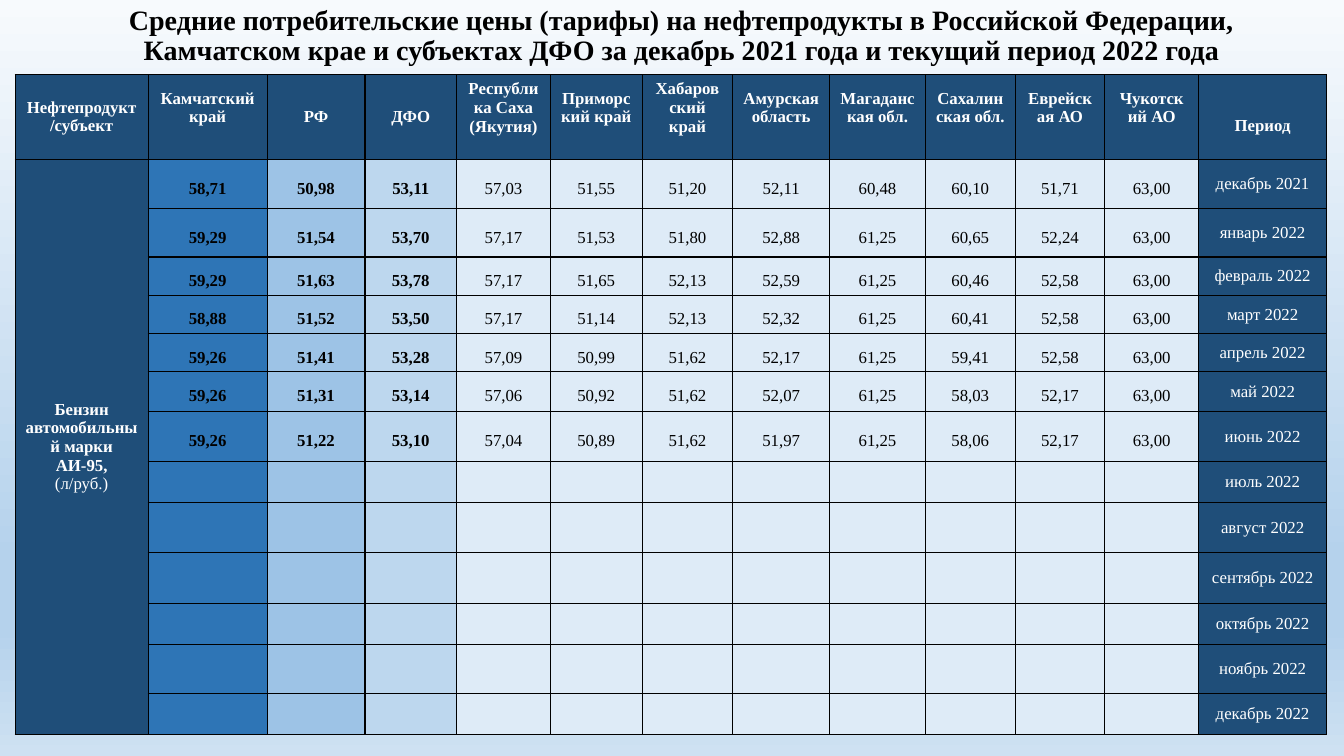
from dataclasses import dataclass
from itertools import product

from lxml.etree import SubElement
from pptx import Presentation
from pptx.dml.color import RGBColor
from pptx.enum.text import MSO_ANCHOR, MSO_AUTO_SIZE, PP_ALIGN
from pptx.oxml.ns import qn
from pptx.slide import Slide
from pptx.table import Table, _Cell
from pptx.text.text import _Paragraph
from pptx.util import Inches, Pt

COLORS = {
    "black": "000000", "white": "FFFFFF", "navy": "1F4E79",
    "region": "2E75B6", "country": "9DC3E6", "district": "BDD7EE", "pale": "DEEBF7",
}
BACKGROUND = {0: "F7FAFD", 74: "B5D2EC", 83: "B5D2EC", 100: "CEE1F2"}
FONT = "Times New Roman"
TITLE = ("Средние потребительские цены (тарифы) на нефтепродукты в Российской Федерации, "
         "Камчатском крае и субъектах ДФО за декабрь 2021 года и текущий период 2022 года")
HALF_LINE = 0.18  # extra cell margin that moves a heading by half a line


@dataclass
class Column:
    heading: str
    width: float
    fill: str = "pale"
    bold: bool = False
    margins: tuple[float, float] = (0.05, 0.05 + HALF_LINE)


@dataclass
class Period:
    name: str
    height: float
    prices: str = ""


COLUMNS = [
    Column("Нефтепродукт/субъект", 1.32, "navy", True, (0.05, 0.05)),
    Column("Камчатский край", 1.18, "region", True),
    Column("РФ", 0.97, "country", True, (0.05, 0.05)),
    Column("ДФО", 0.91, "district", True, (0.05, 0.05)),
    Column("Республика Саха (Якутия)", 0.93),
    Column("Приморский край", 0.91),
    Column("Хабаровский край", 0.9),
    Column("Амурская область", 0.96),
    Column("Магаданская обл.", 0.95),
    Column("Сахалинская обл.", 0.89),
    Column("Еврейская АО", 0.89),
    Column("Чукотский АО", 0.93),
    Column("Период", 1.27, "navy", False, (0.05 + HALF_LINE, 0.05)),
]
HEADER_HEIGHT = 0.84
PERIODS = [
    Period("декабрь 2021", 0.49, "58,71 50,98 53,11 57,03 51,55 51,20 52,11 60,48 60,10 51,71 63,00"),
    Period("январь 2022", 0.48, "59,29 51,54 53,70 57,17 51,53 51,80 52,88 61,25 60,65 52,24 63,00"),
    Period("февраль 2022", 0.38, "59,29 51,63 53,78 57,17 51,65 52,13 52,59 61,25 60,46 52,58 63,00"),
    Period("март 2022", 0.38, "58,88 51,52 53,50 57,17 51,14 52,13 52,32 61,25 60,41 52,58 63,00"),
    Period("апрель 2022", 0.38, "59,26 51,41 53,28 57,09 50,99 51,62 52,17 61,25 59,41 52,58 63,00"),
    Period("май 2022", 0.39, "59,26 51,31 53,14 57,06 50,92 51,62 52,07 61,25 58,03 52,17 63,00"),
    Period("июнь 2022", 0.5, "59,26 51,22 53,10 57,04 50,89 51,62 51,97 61,25 58,06 52,17 63,00"),
    Period("июль 2022", 0.38),
    Period("август 2022", 0.5),
    Period("сентябрь 2022", 0.5),
    Period("октябрь 2022", 0.38),
    Period("ноябрь 2022", 0.49),
    Period("декабрь 2022", 0.4),
]
PRODUCT = {"Бензин автомобильный марки": True, "АИ-95,": True, "(л/руб.)": False}


def apply(target: object, values: dict) -> None:
    for name, value in values.items():
        setattr(target, name, value)


def write(para: _Paragraph, text: str, color: str, bold: bool,
          size: int = 12, spacing: float = 1.0) -> None:
    apply(para, {"alignment": PP_ALIGN.CENTER, "line_spacing": spacing})
    span = para.add_run()
    span.text = text
    apply(span.font, {"name": FONT, "size": Pt(size), "bold": bold})
    span.font.color.rgb = RGBColor.from_string(COLORS[color])


def paint_cell(cell: _Cell, fill: str) -> None:
    properties = cell._tc.get_or_add_tcPr()
    for side in ("a:lnL", "a:lnR", "a:lnT", "a:lnB"):
        line = SubElement(properties, qn(side), w=str(Pt(1)))
        SubElement(SubElement(line, qn("a:solidFill")), qn("a:srgbClr"), val=COLORS["black"])
    cell.fill.solid()
    cell.fill.fore_color.rgb = RGBColor.from_string(COLORS[fill])
    cell.vertical_anchor = MSO_ANCHOR.MIDDLE


def paint_background(page: Slide) -> None:
    page.background.fill.gradient()
    gradient = page.element.find(".//" + qn("a:gradFill"))
    stops = gradient.find(qn("a:gsLst"))
    for stop in list(stops):
        stops.remove(stop)
    for share, color in BACKGROUND.items():
        stop = SubElement(stops, qn("a:gs"), pos=str(share * 1000))
        SubElement(stop, qn("a:srgbClr"), val=color)
    gradient.find(qn("a:lin")).set("ang", str(90 * 60000))


def add_title(page: Slide) -> None:
    box = page.shapes.title
    apply(box, {"left": Inches(0.95), "top": Inches(-0.02),
                "width": Inches(11.62), "height": Inches(0.77)})
    apply(box.text_frame, {"word_wrap": True, "auto_size": MSO_AUTO_SIZE.NONE,
                           "vertical_anchor": MSO_ANCHOR.MIDDLE})
    write(box.text_frame.paragraphs[0], TITLE, "black", True, 20, 0.9)


def add_grid(page: Slide) -> Table:
    widths = [column.width for column in COLUMNS]
    heights = [HEADER_HEIGHT] + [period.height for period in PERIODS]
    table = page.shapes.add_table(len(heights), len(widths), Inches(0.15), Inches(0.74),
                                  Inches(sum(widths)), Inches(sum(heights))).table
    apply(table, {"first_row": False, "horz_banding": False})
    for index, width in enumerate(widths):
        table.columns[index].width = Inches(width)
    for index, height in enumerate(heights):
        table.rows[index].height = Inches(height)
    for row, index in product(range(len(heights)), range(len(widths))):
        paint_cell(table.cell(row, index), COLUMNS[index].fill if row else "navy")
    return table


def fill_table(table: Table) -> None:
    # Headings
    for index, column in enumerate(COLUMNS):
        cell = table.cell(0, index)
        cell.margin_top, cell.margin_bottom = map(Inches, column.margins)
        write(cell.text_frame.paragraphs[0], column.heading, "white", True)

    # Product name down the left side
    product_cell = table.cell(1, 0)
    product_cell.merge(table.cell(len(PERIODS), 0))
    frame = product_cell.text_frame
    for index, (text, bold) in enumerate(PRODUCT.items()):
        para = frame.add_paragraph() if index else frame.paragraphs[0]
        write(para, text, "white", bold)

    # Prices and periods
    for row, period in enumerate(PERIODS, 1):
        for index, price in enumerate(period.prices.split(), 1):
            para = table.cell(row, index).text_frame.paragraphs[0]
            write(para, price, "black", COLUMNS[index].bold, spacing=1.5)
        last = table.cell(row, len(COLUMNS) - 1)
        write(last.text_frame.paragraphs[0], period.name, "white", False)


def main() -> None:
    deck = Presentation()
    apply(deck, {"slide_width": Inches(13.33), "slide_height": Inches(7.5)})
    page = deck.slides.add_slide(deck.slide_layouts[5])
    paint_background(page)
    add_title(page)
    fill_table(add_grid(page))
    deck.save("out.pptx")


if __name__ == "__main__":
    main()
